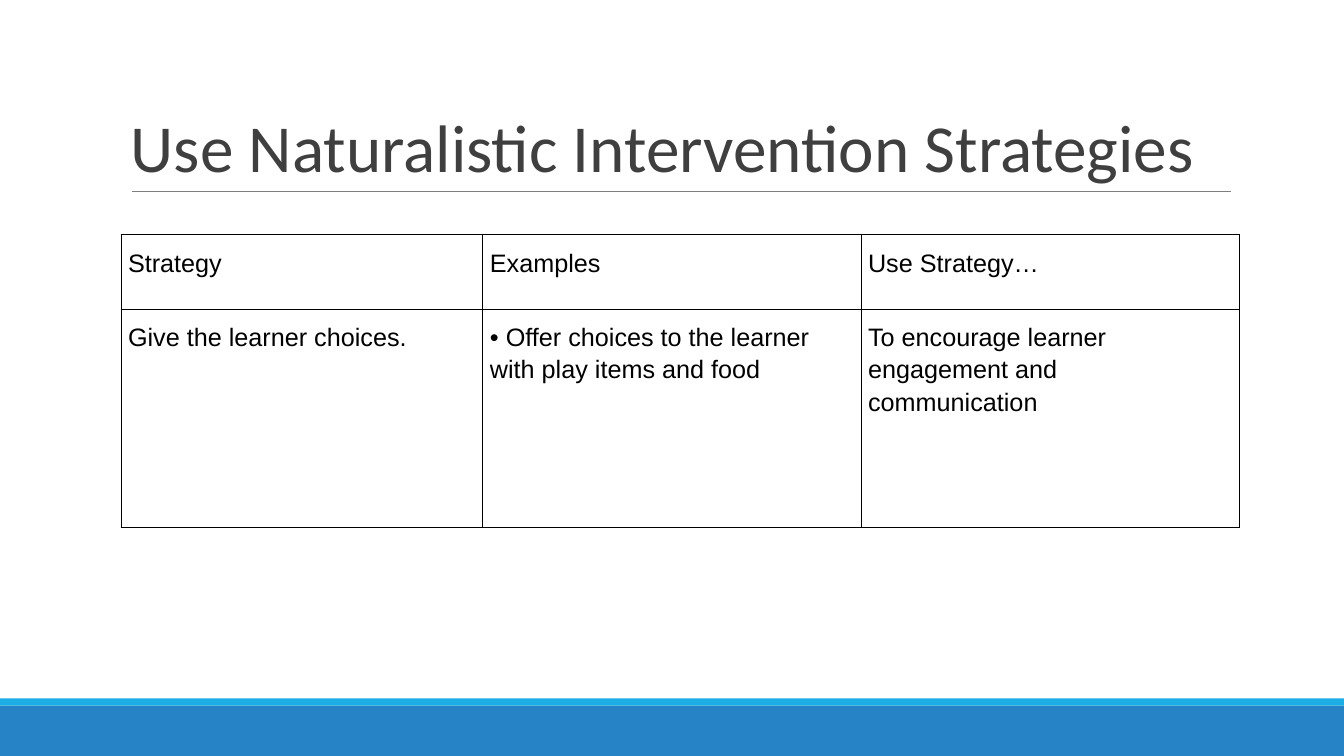
from pptx import Presentation
from pptx.dml.color import RGBColor as RGB
from pptx.enum.shapes import MSO_CONNECTOR as CONN, MSO_SHAPE as SHAPE
from pptx.enum.text import MSO_ANCHOR as ANCHOR
from pptx.oxml import parse_xml
from pptx.oxml.ns import nsdecls
from pptx.util import Inches, Pt

TITLE = "Use Naturalistic Intervention Strategies"
ROWS = [
    ("Strategy", "Examples", "Use Strategy…"),
    (
        "Give the learner choices.",
        "• Offer choices to the learner with play items and food",
        "To encourage learner engagement and communication",
    ),
]
COL_WIDTHS = (3.59, 3.75, 3.75)
ROW_HEIGHTS = (0.74, 2.16)
TABLE_LEFT, TABLE_TOP = 1.2, 2.33
SLIDE_W, SLIDE_H = 13.33, 7.5
BANDS = [(7, 0.5, "band"), (6.93, 0.07, "accent")]

THEME = {
    "band": "2683C6",
    "accent": "1CADE4",
    "rule": "7F7F7F",
    "title": "3F3F3F",
    "text": "000000",
    "border": "000000",
    "title_font": "Calibri",
    "body_font": "Arial",
    "title_size": 48,
    "body_size": 18,
    "line": 0.75,
}


def write(tf, text, *, font, size, color, spacing, insets, anchor):
    tf.word_wrap = True
    tf.vertical_anchor = anchor
    tf.margin_left = tf.margin_right = Inches(insets[0])
    tf.margin_top = tf.margin_bottom = Inches(insets[1])
    p = tf.paragraphs[0]
    p.line_spacing = spacing
    r = p.add_run()
    r.text = text
    r.font.name = font
    r.font.size = Pt(size)
    r.font.color.rgb = RGB.from_string(color)


def add_band(slide, top, height, color):
    sp = slide.shapes.add_shape(
        SHAPE.RECTANGLE, 0, Inches(top), Inches(SLIDE_W), Inches(height))
    sp.shadow.inherit = False
    sp.fill.solid()
    sp.fill.fore_color.rgb = RGB.from_string(color)
    sp.line.fill.background()


def add_rule(slide, left, right, y):
    ln = slide.shapes.add_connector(
        CONN.STRAIGHT, Inches(left), Inches(y), Inches(right), Inches(y))
    ln.line.color.rgb = RGB.from_string(THEME["rule"])
    ln.line.width = Pt(THEME["line"])
    ln._element.spPr.append(parse_xml(f"<a:effectLst {nsdecls('a')}/>"))


def add_borders(cell):
    tc_pr = cell._tc.get_or_add_tcPr()
    for i, side in enumerate(("lnL", "lnR", "lnT", "lnB")):
        tc_pr.insert(i, parse_xml(
            f'<a:{side} {nsdecls("a")} w="{Pt(THEME["line"])}"><a:solidFill>'
            f'<a:srgbClr val="{THEME["border"]}"/></a:solidFill></a:{side}>'))


def add_strategy_table(slide):
    table = slide.shapes.add_table(
        len(ROWS), len(COL_WIDTHS), Inches(TABLE_LEFT), Inches(TABLE_TOP),
        Inches(sum(COL_WIDTHS)), Inches(sum(ROW_HEIGHTS))).table
    table.first_row = table.horz_banding = False
    for col, width in zip(table.columns, COL_WIDTHS):
        col.width = Inches(width)
    for row, height, texts in zip(table.rows, ROW_HEIGHTS, ROWS):
        row.height = Inches(height)
        for cell, text in zip(row.cells, texts):
            cell.fill.background()
            add_borders(cell)
            cell.vertical_anchor = ANCHOR.TOP
            cell.margin_left = cell.margin_right = Inches(0.07)
            cell.margin_top = cell.margin_bottom = Inches(0.1)
            p = cell.text_frame.paragraphs[0]
            p.line_spacing = 1.15
            r = p.add_run()
            r.text = text
            r.font.name = THEME["body_font"]
            r.font.size = Pt(THEME["body_size"])
            r.font.color.rgb = RGB.from_string(THEME["text"])


def main():
    prs = Presentation()
    prs.slide_width, prs.slide_height = Inches(SLIDE_W), Inches(SLIDE_H)
    s = prs.slides.add_slide(prs.slide_layouts[6])
    for top, height, color in BANDS:
        add_band(s, top, height, THEME[color])
    add_rule(s, 1.31, 12.21, 1.9)
    box = s.shapes.add_textbox(
        Inches(TABLE_LEFT), Inches(0.31), Inches(11), Inches(1.59))
    write(box.text_frame, TITLE, font=THEME["title_font"],
          size=THEME["title_size"], color=THEME["title"], spacing=0.85,
          insets=(0.1, 0.05), anchor=ANCHOR.BOTTOM)
    add_strategy_table(s)
    prs.save("out.pptx")


if __name__ == "__main__":
    main()
